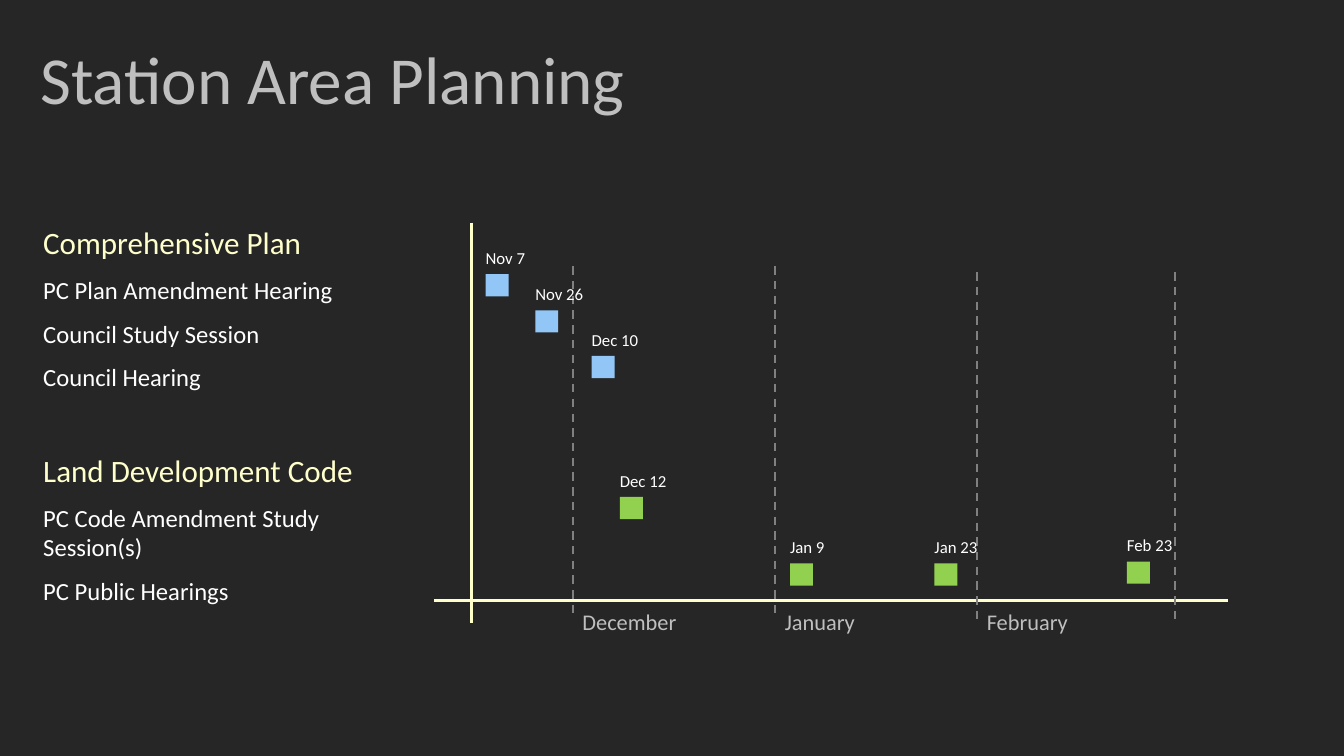
from dataclasses import dataclass

from lxml import etree
from pptx import Presentation
from pptx import util as u
from pptx.dml.color import RGBColor
from pptx.enum import dml, shapes, text
from pptx.oxml import ns


@dataclass(frozen=True)
class Theme:
    """Colours, type sizes and the font of the slide."""
    font: str = "Calibri"
    back: str = "262626"
    soft: str = "BFBFBF"
    white: str = "FFFFFF"
    cream: str = "FFFFCC"
    grey: str = "808080"
    blue: str = "91C6F7"
    green: str = "92D050"
    title: float = 48
    head: float = 22.2
    item: float = 17.6
    month: float = 16
    date: float = 12


THEME = Theme()

PLANS = [
    ("Comprehensive Plan", ["PC Plan Amendment Hearing", "Council Study Session",
                            "Council Hearing"]),
    ("Land Development Code", ["PC Code Amendment Study Session(s)",
                               "PC Public Hearings"]),
]
MONTHS = [(3.48, 1.1, "December"), (8.58, 1.1, "January"),
          (13.67, 1.25, "February"), (18.67, 1.25, "")]
DATES = [
    ("Nov 7", 1.29, 1.3, THEME.blue),
    ("Nov 26", 2.54, 2.21, THEME.blue),
    ("Dec 10", 3.96, 3.36, THEME.blue),
    ("Dec 12", 4.67, 6.91, THEME.green),
    ("Jan 9", 8.96, 8.59, THEME.green),
    ("Jan 23", 12.6, 8.59, THEME.green),
    ("Feb 23", 17.45, 8.54, THEME.green),
]


def write(frame, words, size, color, first=True, before=0):
    """Write one left-aligned paragraph into a text frame."""
    para = frame.paragraphs[0] if first else frame.add_paragraph()
    para.alignment = text.PP_ALIGN.LEFT
    para.space_before = u.Pt(before)
    run = para.add_run()
    run.text = words
    run.font.name = THEME.font
    run.font.size = u.Pt(size)
    run.font.color.rgb = RGBColor.from_string(color)


def add_box(slide, x, y, w, h):
    """Add a wrapping text box and return its frame."""
    frame = slide.shapes.add_textbox(u.Cm(x), u.Cm(y), u.Cm(w), u.Cm(h)).text_frame
    frame.word_wrap = True
    return frame


def label(slide, words, x, y, w, h, size, color):
    """Add a short label that grows with its text."""
    frame = add_box(slide, x, y, w, h)
    frame.auto_size = text.MSO_AUTO_SIZE.SHAPE_TO_FIT_TEXT
    write(frame, words, size, color)


def rule(slide, x1, y1, x2, y2, color, width, dash=None):
    """Draw a straight line without a shadow."""
    line = slide.shapes.add_connector(shapes.MSO_CONNECTOR.STRAIGHT,
                                      u.Cm(x1), u.Cm(y1), u.Cm(x2), u.Cm(y2))
    line.line.color.rgb = RGBColor.from_string(color)
    line.line.width = u.Pt(width)
    if dash:
        line.line.dash_style = dash
    etree.SubElement(line._element.spPr, ns.qn("a:effectLst"))


def mark(slide, x, y, w, h, color):
    """Draw a plain filled marker."""
    shape = slide.shapes.add_shape(shapes.MSO_SHAPE.RECTANGLE,
                                   u.Cm(x), u.Cm(y), u.Cm(w), u.Cm(h))
    shape.shadow.inherit = False
    shape.fill.solid()
    shape.fill.fore_color.rgb = RGBColor.from_string(color)
    shape.line.fill.background()


def add_title(slide, x, y, w, h):
    """Place and format the title."""
    title = slide.shapes.title
    title.left, title.top, title.width, title.height = map(u.Cm, (x, y, w, h))
    frame = title.text_frame
    frame.auto_size = text.MSO_AUTO_SIZE.NONE
    frame.vertical_anchor = text.MSO_ANCHOR.BOTTOM
    write(frame, "Station Area Planning", THEME.title, THEME.soft)


def add_plans(slide, x, y, w, h):
    """List each plan with its steps."""
    frame = add_box(slide, x, y, w, h)
    for rank, (head, items) in enumerate(PLANS):
        write(frame, head, THEME.head, THEME.cream, rank == 0, 42.5 * rank)
        for item in items:
            write(frame, item, THEME.item, THEME.white, False, 10)


def add_chart(slide, x, y, w, h):
    """Draw the axes, month lines and dated markers."""
    base = y + 9.53
    rule(slide, x + 0.94, y, x + 0.94, y + h, THEME.cream, 2.25)
    rule(slide, x, base, x + w, base, THEME.cream, 2.25)
    for dx, dy, name in MONTHS:
        rule(slide, x + dx, y + dy, x + dx, y + dy + 8.85, THEME.grey, 1.5,
             dml.MSO_LINE.DASH)
        if name:
            label(slide, name, x + dx, base + 0.05, 3.18, 0.94,
                  THEME.month, THEME.soft)
    for day, dx, dy, color in DATES:
        mark(slide, x + dx, y + dy, 0.58, 0.56, color)
        label(slide, day, x + dx - 0.25, y + dy - 0.79, 1.9, 0.77,
              THEME.date, THEME.white)


def main():
    """Build and save the slide."""
    deck = Presentation()
    deck.slide_width, deck.slide_height = u.Cm(33.87), u.Cm(19.05)
    slide = deck.slides.add_slide(deck.slide_layouts[5])
    slide.background.fill.solid()
    slide.background.fill.fore_color.rgb = RGBColor.from_string(THEME.back)
    add_title(slide, 0.76, 0.89, 15.8, 2.21)
    add_plans(slide, 0.84, 5.51, 9.78, 9.3)
    add_chart(slide, 10.95, 5.61, 19.99, 10.09)
    deck.save("out.pptx")


if __name__ == "__main__":
    main()
